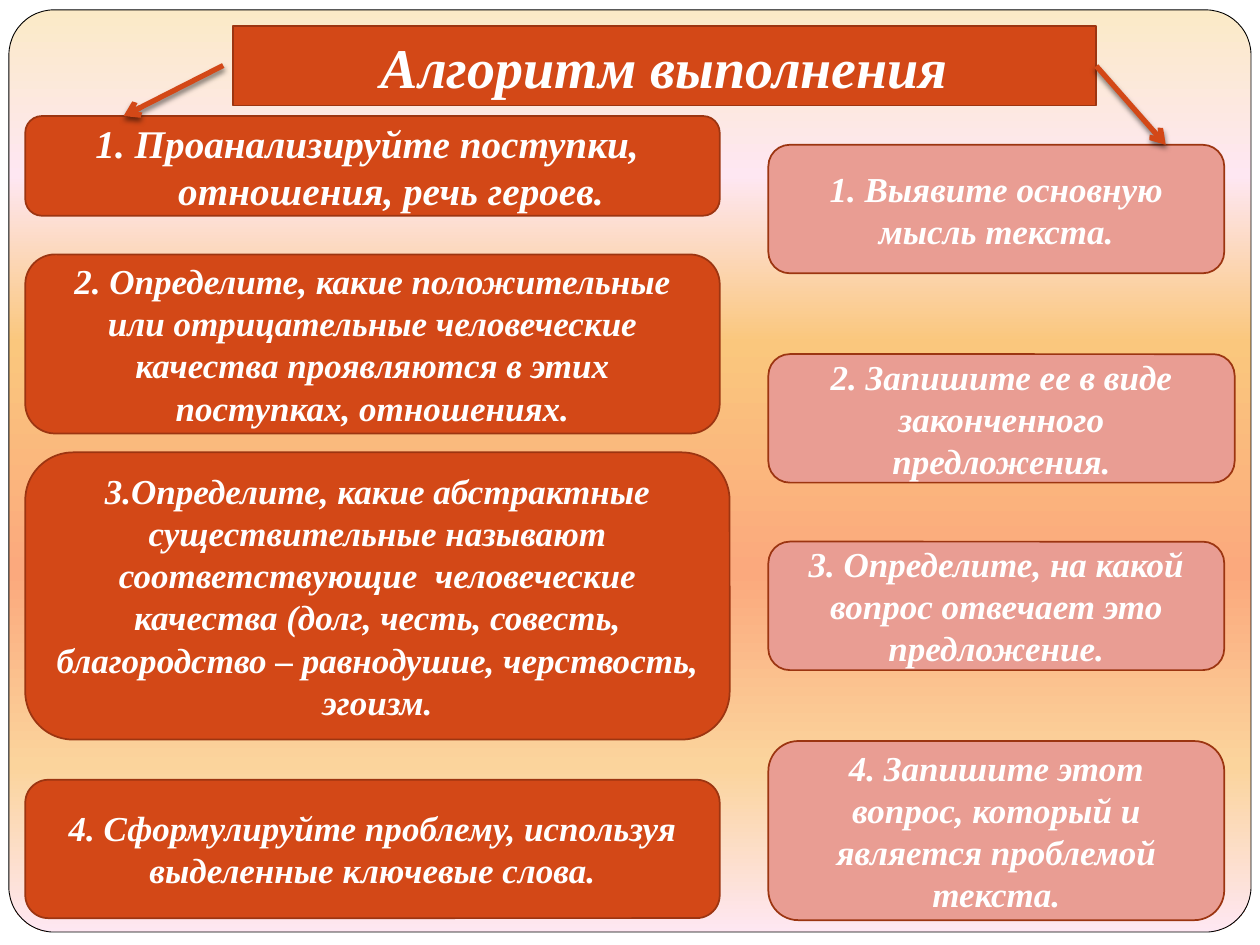
from dataclasses import dataclass

from lxml import etree
from pptx import Presentation
from pptx.dml.color import RGBColor
from pptx.enum.shapes import MSO_CONNECTOR, MSO_SHAPE
from pptx.enum.text import MSO_ANCHOR, MSO_AUTO_SIZE, PP_ALIGN
from pptx.oxml import parse_xml
from pptx.oxml.ns import nsdecls, qn
from pptx.util import Cm, Pt

ROUNDED = MSO_SHAPE.ROUNDED_RECTANGLE
STRAIGHT = MSO_CONNECTOR.STRAIGHT
CENTER = PP_ALIGN.CENTER
MIDDLE = MSO_ANCHOR.MIDDLE
NO_AUTOFIT = MSO_AUTO_SIZE.NONE
RIGHT_SIDE = 3

FONT = "Times New Roman"
WHITE = RGBColor(0xFF, 0xFF, 0xFF)
BLACK = RGBColor(0x00, 0x00, 0x00)
ORANGE = RGBColor(0xD3, 0x48, 0x17)
PINK = RGBColor(0xE9, 0x9D, 0x93)
OUTLINE = RGBColor(0x9C, 0x35, 0x11)
CREAM = RGBColor(0xFB, 0xEA, 0xC7)
ROSE = RGBColor(0xFE, 0xE7, 0xF2)
GOLD = RGBColor(0xFA, 0xC7, 0x7D)
CORAL = RGBColor(0xFB, 0xA9, 0x7D)
SAND = RGBColor(0xFB, 0xD4, 0x9C)
PANEL_STOPS = [(0, CREAM), (18, ROSE), (36, GOLD), (61, CORAL), (82, SAND), (100, ROSE)]

LEFT_X, RIGHT_X = 0.51, 15.49
LEFT_WIDTH, RIGHT_WIDTH = 14.0, 9.19


@dataclass(frozen=True)
class Step:
    text: str
    top: float
    height: float
    width: float
    size: float = 20
    hanging: float = 0
    space_before: float = 0


@dataclass(frozen=True)
class Arrow:
    start: tuple[float, float]
    end: tuple[float, float]
    from_title: bool = False


ANALYSIS_STEPS = [
    Step("1. Проанализируйте поступки,  отношения, речь героев.",
         2.34, 2.01, LEFT_WIDTH, size=22.4, hanging=0.76, space_before=5.8),
    Step("2. Определите, какие положительные или отрицательные человеческие "
         "качества проявляются в этих поступках, отношениях.",
         5.13, 3.61, LEFT_WIDTH),
    Step("3.Определите, какие абстрактные существительные называют "
         "соответствующие  человеческие качества (долг, честь, совесть, "
         "благородство – равнодушие, черствость, эгоизм.",
         9.12, 5.79, 14.2),
    Step("4. Сформулируйте проблему, используя выделенные ключевые слова.",
         15.72, 2.79, LEFT_WIDTH),
]
IDEA_STEPS = [
    Step("1. Выявите основную мысль текста.", 2.92, 2.59, RIGHT_WIDTH),
    Step("2. Запишите ее в виде законченного предложения.", 7.14, 2.59, 9.4),
    Step("3. Определите, на какой вопрос отвечает это предложение.",
         10.92, 2.59, RIGHT_WIDTH),
    Step("4. Запишите этот вопрос, который и является проблемой текста.",
         14.94, 3.61, RIGHT_WIDTH),
]
ARROWS = [
    Arrow((4.5, 1.32), (2.49, 2.34)),
    Arrow((22.1, 1.33), (23.5, 2.92), from_title=True),
]


def add_panel(page) -> None:
    panel = page.shapes.add_shape(ROUNDED, Cm(0.18), Cm(0.2), Cm(25.04), Cm(18.59))
    panel.adjustments[0] = 0.049
    panel.shadow.inherit = False
    panel.line.color.rgb = BLACK
    panel.line.width = Pt(0.5)
    panel.fill.gradient()
    panel.fill.gradient_angle = 270
    stops = panel.element.spPr.find(f".//{qn('a:gsLst')}")
    for stop in list(stops):
        stops.remove(stop)
    for percent, color in PANEL_STOPS:
        stop = etree.SubElement(stops, qn("a:gs"), pos=str(percent * 1000))
        etree.SubElement(stop, qn("a:srgbClr"), val=str(color))


def style_box(box, text: str, size: float, fill: RGBColor) -> None:
    box.fill.solid()
    box.fill.fore_color.rgb = fill
    box.line.color.rgb = OUTLINE
    box.line.width = Pt(1)
    frame = box.text_frame
    frame.text = text
    frame.word_wrap = True
    frame.auto_size = NO_AUTOFIT
    frame.vertical_anchor = MIDDLE
    para = frame.paragraphs[0]
    para.alignment = CENTER
    para.font.name = FONT
    para.font.size = Pt(size)
    para.font.bold = True
    para.font.italic = True
    para.font.color.rgb = WHITE


def place_title(page):
    title = page.shapes.title
    title.left, title.top, title.width, title.height = Cm(4.7), Cm(0.53), Cm(17.4), Cm(1.6)
    title.element.spPr.append(
        parse_xml(f'<a:prstGeom {nsdecls("a")} prst="roundRect"><a:avLst/></a:prstGeom>'))
    style_box(title, "Алгоритм выполнения", 32, ORANGE)
    page.shapes.element.append(title.element)  # bring in front of the panel
    return title


def add_step(page, step: Step, left: float, fill: RGBColor) -> None:
    box = page.shapes.add_shape(
        ROUNDED, Cm(left), Cm(step.top), Cm(step.width), Cm(step.height))
    box.shadow.inherit = False
    style_box(box, step.text, step.size, fill)
    para = box.text_frame.paragraphs[0]
    if step.space_before:
        para.space_before = Pt(step.space_before)
    if step.hanging:
        properties = para._p.get_or_add_pPr()
        properties.set("marL", str(Cm(step.hanging)))
        properties.set("indent", str(-Cm(step.hanging)))


def add_arrow(page, arrow: Arrow, title) -> None:
    line = page.shapes.add_connector(
        STRAIGHT, *(Cm(value) for value in arrow.start + arrow.end))
    if arrow.from_title:
        line.begin_connect(title, RIGHT_SIDE)
    line.line.color.rgb = ORANGE
    line.line.width = Pt(3)
    etree.SubElement(line.line._get_or_add_ln(), qn("a:tailEnd"), type="arrow")
    effects = etree.SubElement(line._element.spPr, qn("a:effectLst"))
    shadow = etree.SubElement(
        effects, qn("a:outerShdw"), blurRad=str(Pt(3)), dist=str(Pt(2)),
        dir="5400000", rotWithShape="0")
    color = etree.SubElement(shadow, qn("a:srgbClr"), val=str(BLACK))
    etree.SubElement(color, qn("a:alpha"), val="50000")


def main() -> None:
    deck = Presentation()
    deck.slide_width, deck.slide_height = Cm(25.4), Cm(19.05)
    page = deck.slides.add_slide(deck.slide_layouts.get_by_name("Title Only"))
    add_panel(page)
    title = place_title(page)
    for left, fill, steps in (
        (LEFT_X, ORANGE, ANALYSIS_STEPS),
        (RIGHT_X, PINK, IDEA_STEPS),
    ):
        for step in steps:
            add_step(page, step, left, fill)
    for arrow in ARROWS:
        add_arrow(page, arrow, title)
    deck.save("out.pptx")


if __name__ == "__main__":
    main()
